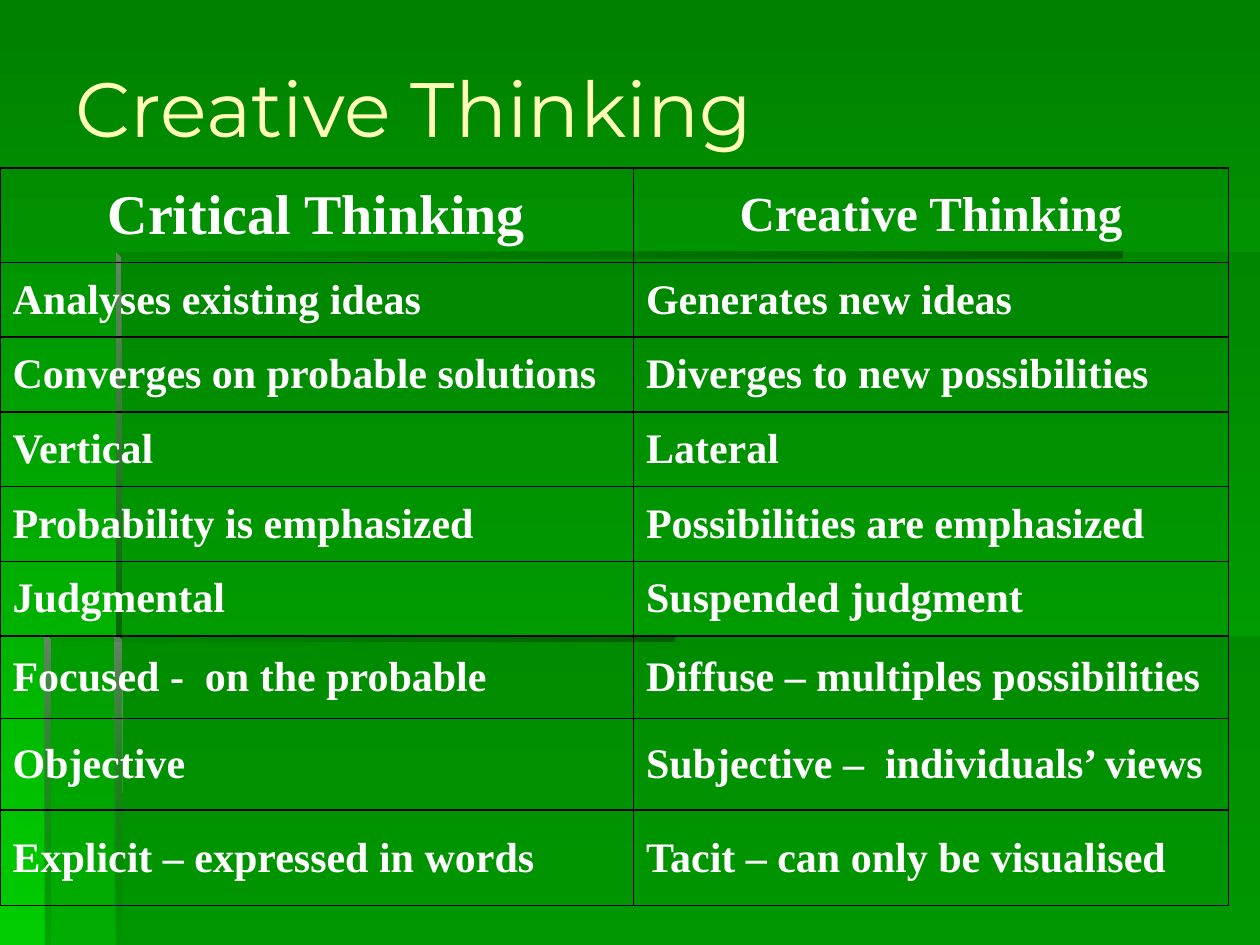
"""Build a slide that sets critical thinking beside creative thinking."""
from dataclasses import dataclass

from lxml.etree import SubElement as Sub
from pptx import Presentation as Deck
from pptx.dml.color import RGBColor as Rgb
from pptx.enum.text import MSO_ANCHOR as Anchor, MSO_AUTO_SIZE as Fit, PP_ALIGN as Align
from pptx.oxml import parse_xml as read_xml
from pptx.oxml.ns import nsdecls, qn
from pptx.util import Pt

HUES = {
    "top": "008000",
    "base": "00CC00",
    "shade": "006600",
    "deep": "005E00",
    "glint": "668666",
    "title": "FFFFB7",
    "text": "FFFFFF",
    "rule": "000000",
}
WIDTH, HEIGHT = 720, 540
ACROSS, DOWN = 0, 270
INDENT = 27


@dataclass(frozen=True)
class Tone:
    hue: str
    alpha: int = 100


@dataclass(frozen=True)
class Panel:
    points: tuple[tuple[float, float], ...]
    tones: tuple[Tone, ...]
    angle: int = ACROSS


@dataclass(frozen=True)
class Row:
    left: str
    right: str
    height: float = 42.7
    sizes: tuple[int, int] = (24, 24)
    align: Align = Align.LEFT


VEIL = (Tone("shade", 30),)
FADE = (Tone("shade", 0), Tone("deep"))
GLOW = (Tone("glint"), Tone("shade"))

PANELS = (
    Panel(((66.2, 363.6), (66.2, HEIGHT), (WIDTH, HEIGHT), (WIDTH, 363.6)), VEIL),
    Panel(((67.7, 364.3), (26, 364.3), (26, HEIGHT), (WIDTH, HEIGHT),
           (WIDTH, 144), (67.7, 144)), VEIL),
    Panel(((66.2, 144), (66.2, 147.6), (641.5, 147.6), (641.5, 144)), FADE),
    Panel(((66.2, 144), (66.2, 367.2), (69.8, 367.2), (69.1, 146.9)), GLOW, DOWN),
    Panel(((65.5, HEIGHT), (69.8, HEIGHT), (69.1, 365.8), (65.5, 362.9)),
          (Tone("glint"), Tone("shade", 0)), DOWN),
    Panel(((25.2, 362.9), (25.2, 366.5), (385.2, 366.5), (385.2, 362.9)), FADE),
    Panel(((25.2, 362.9), (25.2, HEIGHT), (28.8, HEIGHT), (28.8, 366.5)),
          (Tone("glint"), Tone("shade", 10)), DOWN),
)

ROWS = (
    Row("Critical Thinking", "Creative Thinking", 54, (32, 28), Align.CENTER),
    Row("Analyses existing ideas", "Generates new ideas"),
    Row("Converges on probable solutions", "Diverges to new possibilities"),
    Row("Vertical", "Lateral"),
    Row("Probability is emphasized", "Possibilities are emphasized"),
    Row("Judgmental", "Suspended judgment"),
    Row("Focused -  on the probable", "Diffuse – multiples possibilities", 47),
    Row("Objective", "Subjective –  individuals’ views", 52.5),
    Row("Explicit – expressed in words", "Tacit – can only be visualised", 54.5),
)
COLS = (362, 340)


def paint(fill, root, tones: tuple[Tone, ...], angle: int) -> None:
    if len(tones) == 1:
        fill.solid()
        fill.fore_color.rgb = Rgb.from_string(HUES[tones[0].hue])
    else:
        fill.gradient()
        fill.gradient_angle = angle
        for stop, tone in zip(fill.gradient_stops, tones):
            stop.color.rgb = Rgb.from_string(HUES[tone.hue])
    for mark, tone in zip(root.findall(".//" + qn("a:srgbClr")), tones):
        if tone.alpha < 100:
            Sub(mark, qn("a:alpha"), val=str(tone.alpha * 1000))


def draw_panel(slide, panel: Panel) -> None:
    first, *rest = [(Pt(x), Pt(y)) for x, y in panel.points]
    pen = slide.shapes.build_freeform(*first)
    pen.add_line_segments(rest, close=True)
    shape = pen.convert_to_shape()
    shape.shadow.inherit = False
    shape.line.fill.background()
    paint(shape.fill, shape._element.spPr, panel.tones, panel.angle)


def write(frame, text: str, *, size: float, font: str, hue: str,
          bold: bool = False, align: Align = Align.LEFT, indent: float = 0) -> None:
    para = frame.paragraphs[0]
    para.alignment = align
    if indent:
        props = para._p.get_or_add_pPr()
        props.set("marL", str(Pt(indent)))
        props.set("indent", str(-Pt(indent)))
    run = para.add_run()
    run.text = text
    run.font.size = Pt(size)
    run.font.name = font
    run.font.bold = bold
    run.font.color.rgb = Rgb.from_string(HUES[hue])


def frame_cell(cell) -> None:
    cell.fill.background()
    props = cell._tc.get_or_add_tcPr()
    for spot, side in enumerate("LRTB"):
        props.insert(spot, read_xml(
            f'<a:ln{side} {nsdecls("a")} w="{Pt(1)}"><a:solidFill>'
            f'<a:srgbClr val="{HUES["rule"]}"/></a:solidFill></a:ln{side}>'))


def draw_table(slide, rows: tuple[Row, ...]) -> None:
    high = sum(row.height for row in rows)
    table = slide.shapes.add_table(
        len(rows), len(COLS), Pt(0), Pt(96), Pt(sum(COLS)), Pt(high)).table
    table.first_row = table.horz_banding = False
    for col, width in zip(table.columns, COLS):
        col.width = Pt(width)
    for line, row in zip(table.rows, rows):
        line.height = Pt(row.height)
        for cell, text, size in zip(line.cells, (row.left, row.right), row.sizes):
            cell.vertical_anchor = Anchor.MIDDLE
            frame_cell(cell)
            write(cell.text_frame, text, size=size, font="Times New Roman",
                  hue="text", bold=True, align=row.align, indent=INDENT)


def draw_title(slide, text: str) -> None:
    title = slide.shapes.title
    title.left, title.top, title.width, title.height = map(Pt, (36, 19.5, 660, 83))
    frame = title.text_frame
    frame.word_wrap = True
    frame.auto_size = Fit.NONE
    frame.vertical_anchor = Anchor.MIDDLE
    write(frame, text, size=44, font="Montserrat", hue="title")
    slide.shapes._spTree.append(title._element)


def main() -> None:
    deck = Deck()
    deck.slide_width, deck.slide_height = Pt(WIDTH), Pt(HEIGHT)
    slide = deck.slides.add_slide(deck.slide_layouts[5])
    paint(slide.background.fill, slide._element, (Tone("top"), Tone("base")), DOWN)
    for panel in PANELS:
        draw_panel(slide, panel)
    draw_table(slide, ROWS)
    draw_title(slide, "Creative Thinking")
    deck.save("out.pptx")


if __name__ == "__main__":
    main()
